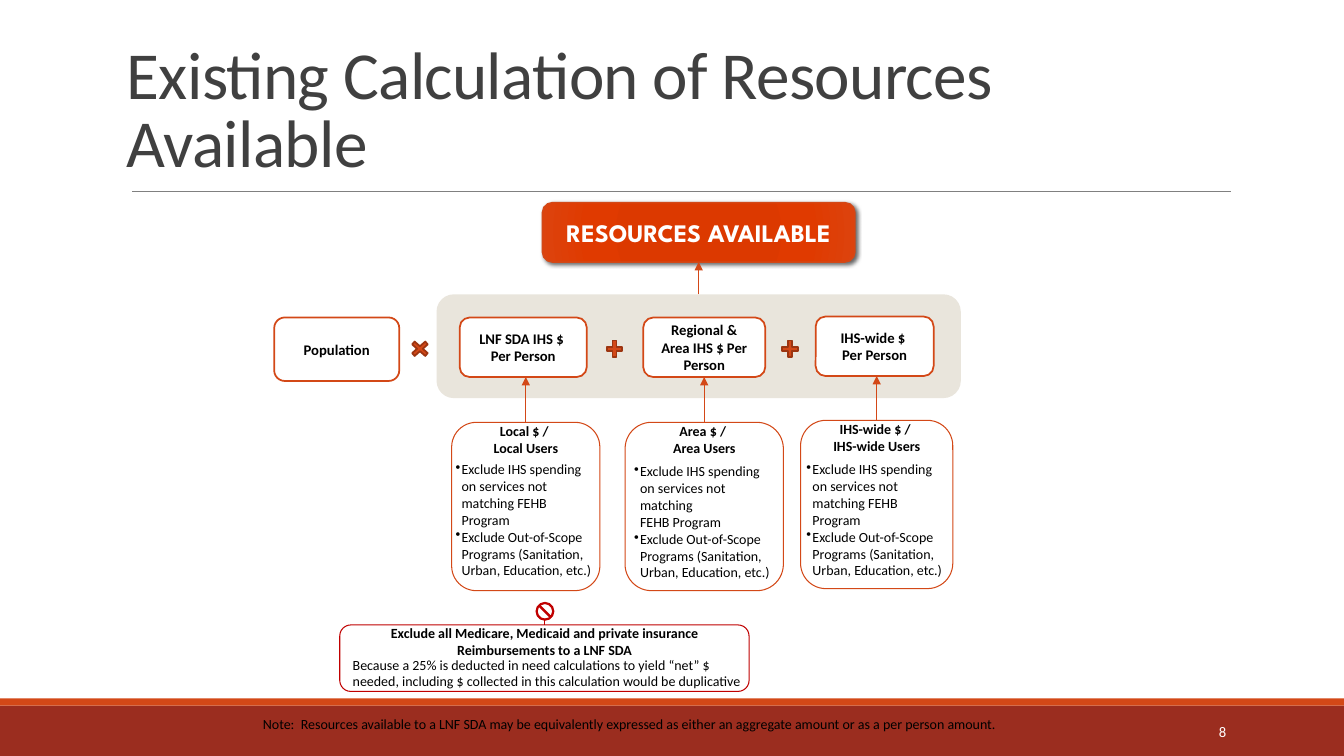
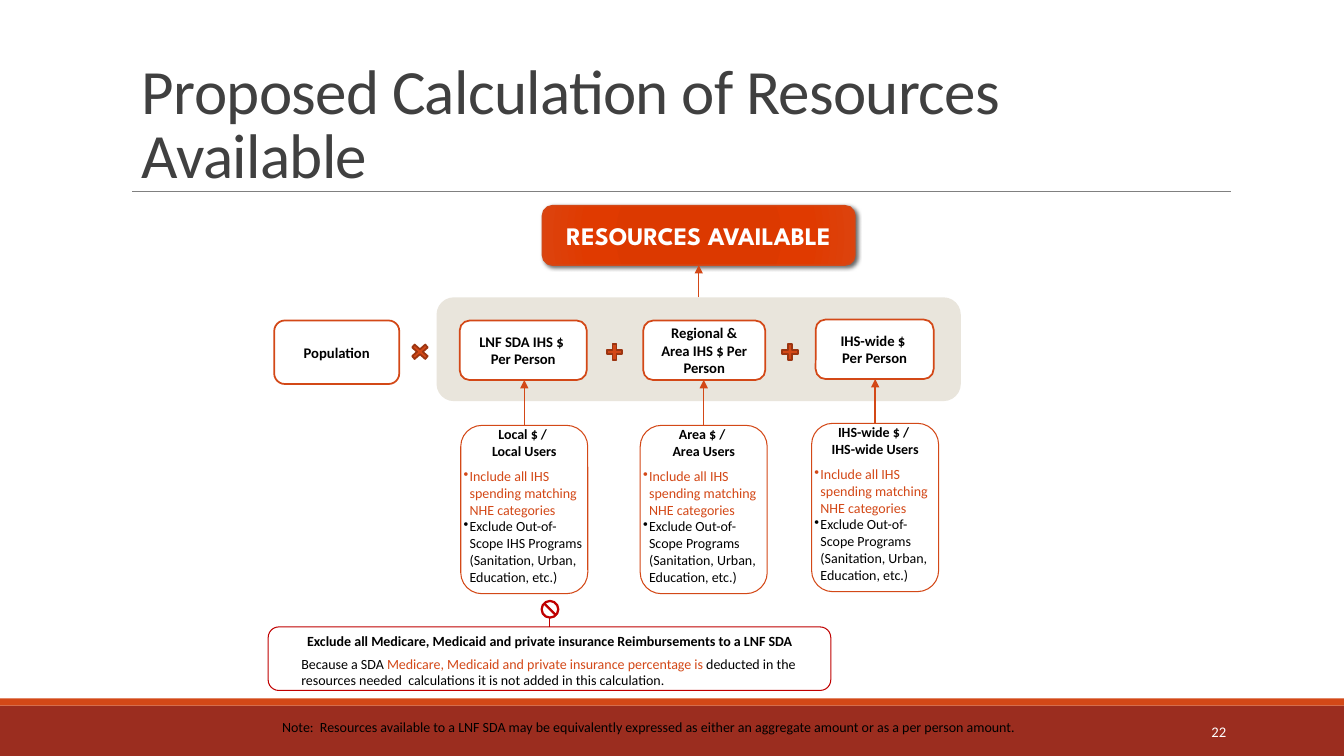
from typing import NamedTuple

from pptx import Presentation
from pptx.dml.color import RGBColor
from pptx.enum import shapes, text
from pptx.oxml import ns, parse_xml
from pptx.util import Inches, Pt

COLORS = {
    "white": "FFFFFF", "black": "000000", "title": "404040", "rule": "808080",
    "orange": "D34817", "rust": "9B2D1F", "edge": "9C3511",
    "panel": "E9E5DC", "red": "C00000",
}
GLOW = [(0, "DA3900"), (34, "DC3900"), (70, "E03A00"), (100, "DC430E")]
KIND = shapes.MSO_SHAPE
ALIGN = text.PP_ALIGN
ANCHOR = text.MSO_ANCHOR
NOTE = ("Note:  Resources available to a LNF SDA may be equivalently expressed "
        "as either an aggregate amount or as a per person amount.")
BAN = ("Exclude all Medicare, Medicaid and private insurance "
       "Reimbursements to a LNF SDA")
SCOPE = "Exclude Out-of-Scope Programs (Sanitation, Urban, Education, etc.)"
SPEND = "Exclude IHS spending on services not matching FEHB Program"
MATCH = "Include all IHS spending matching NHE categories"


class Box(NamedTuple):
    x: float
    y: float
    w: float
    h: float

    @property
    def mid(self) -> float:
        return self.x + self.w / 2

    @property
    def end(self) -> float:
        return self.y + self.h

    def down(self, dy: float) -> "Box":
        return self._replace(y=self.y + dy)


class Span(NamedTuple):
    words: str
    color: str = "black"


class Para(NamedTuple):
    spans: list[Span]
    size: float = 10
    bold: bool = False
    align: ALIGN = ALIGN.LEFT
    face: str = "Calibri"
    bullet: bool = False
    after: float = 0


class Factor(NamedTuple):
    words: str
    box: Box


class Card(NamedTuple):
    head: str
    box: Box
    gap: float
    items: list[Span]


class Page(NamedTuple):
    title: str
    name: Box
    size: float
    number: str
    dy: float
    cards: list[Card]
    wide: float
    ban: Box
    pad: float
    stop: Box
    why: Box
    cause: list[Span]
    note: Box


FACTORS = [
    Factor("Population", Box(2.72, 3.15, 1.24, 0.63)),
    Factor("LNF SDA IHS $ \vPer Person", Box(4.56, 3.15, 1.26, 0.59)),
    Factor("Regional & Area IHS $ Per Person", Box(6.38, 3.15, 1.21, 0.59)),
    Factor("IHS-wide $ \vPer Person", Box(8.09, 3.14, 1.17, 0.59)),
]
SIGNS = [
    (KIND.MATH_MULTIPLY, Box(4.04, 3.35, 0.25, 0.22), 0.17),
    (KIND.MATH_PLUS, Box(5.99, 3.35, 0.21, 0.22), 0.19),
    (KIND.MATH_PLUS, Box(7.73, 3.35, 0.21, 0.22), 0.19),
]
RESULT = Box(5.38, 2.01, 3.1, 0.59)
PANEL = Box(4.33, 2.92, 5.2, 1.03)
HEADS = ["Local $ / \vLocal Users", "Area $ / \vArea Users",
         "IHS-wide $ / \vIHS-wide Users"]

PAGES = [
    Page(
        "Existing Calculation of Resources Available",
        Box(1.16, 0.86, 11.24, 0.99), 48, "8", 0,
        [
            Card(HEADS[0], Box(4.48, 4.19, 1.47, 1.67), 3.5,
                 [Span(SPEND), Span(SCOPE)]),
            Card(HEADS[1], Box(6.2, 4.19, 1.57, 1.67), 5,
                 [Span(SPEND.replace(" FEHB", "\vFEHB")), Span(SCOPE)]),
            Card(HEADS[2], Box(7.94, 4.17, 1.51, 1.67), 5,
                 [Span(SPEND), Span(SCOPE)]),
        ],
        1.59, Box(3.37, 6.2, 4.06, 0.66), 0, Box(5.32, 5.98, 0.17, 0.17),
        Box(3.4, 6.46, 4.1, 0.44),
        [Span("Because a 25% is deducted in need calculations to yield “net” $ "
              "needed, including $ collected in this calculation would be "
              "duplicative")],
        Box(2.51, 7.05, 7.73, 0.27),
    ),
    Page(
        "Proposed Calculation of Resources Available",
        Box(1.31, 0.96, 10.96, 0.99), 45, "22", 0.03,
        [
            Card(HEADS[0], Box(4.57, 4.19, 1.26, 1.67), 6,
                 [Span(MATCH, "orange"),
                  Span(SCOPE.replace("Programs", "IHS Programs"))]),
            Card(HEADS[1], Box(6.35, 4.19, 1.26, 1.67), 6,
                 [Span(MATCH, "orange"), Span(SCOPE)]),
            Card(HEADS[2], Box(8.05, 4.17, 1.26, 1.67), 6,
                 [Span(MATCH, "orange"), Span(SCOPE)]),
        ],
        1.4, Box(2.66, 6.22, 5.58, 0.63), 0.06, Box(5.37, 5.96, 0.17, 0.17),
        Box(2.89, 6.45, 5.35, 0.44),
        [Span("Because a SDA"),
         Span(" Medicare, Medicaid and private insurance percentage is ", "orange"),
         Span("deducted in the resources needed  calculations it is not added "
              "in this calculation.")],
        Box(2.7, 7.08, 8, 0.27),
    ),
]


def tint(name: str) -> RGBColor:
    return RGBColor.from_string(COLORS[name])


def place(box: Box) -> list[int]:
    return [Inches(v) for v in box]


def node(xml: str):
    """Make one DrawingML element from text without its namespace."""
    tag, rest = xml[:xml.index(" ")], xml[xml.index(" "):]
    return parse_xml(f"{tag} {ns.nsdecls('a')}{rest}")


def write(shape, paras: list[Para], anchor=ANCHOR.TOP) -> None:
    frame = shape.text_frame
    frame.word_wrap = True
    frame.vertical_anchor = anchor
    for i, para in enumerate(paras):
        line = frame.paragraphs[0] if i == 0 else frame.add_paragraph()
        line.alignment = para.align
        line.space_after = Pt(para.after)
        font = line.font
        font.name, font.size, font.bold = para.face, Pt(para.size), para.bold
        font.color.rgb = tint(para.spans[0].color)
        if para.bullet:
            props = line._p.get_or_add_pPr()
            props.set("marL", str(Inches(0.06)))
            props.set("indent", str(-Inches(0.06)))
            props.insert_element_before(node('<a:buChar char="•"/>'), "a:defRPr")
        for span in para.spans:
            for j, words in enumerate(span.words.split("\v")):
                if j:
                    line.add_line_break()
                run = line.add_run()
                run.text = words
                if span.color != para.spans[0].color:
                    run.font.color.rgb = tint(span.color)


def label(slide, box: Box, paras: list[Para], anchor=ANCHOR.TOP):
    shape = slide.shapes.add_textbox(*place(box))
    write(shape, paras, anchor)
    return shape


def draw(slide, box: Box, fill: str, edge: str = "", width: float = 0,
         kind=KIND.ROUNDED_RECTANGLE):
    shape = slide.shapes.add_shape(kind, *place(box))
    shape.shadow.inherit = False
    shape.fill.solid()
    shape.fill.fore_color.rgb = tint(fill)
    if edge:
        shape.line.color.rgb = tint(edge)
        shape.line.width = Pt(width)
    else:
        shape.line.fill.background()
    return shape


def link(slide, start: tuple[float, float], stop: tuple[float, float],
         color: str, width: float, arrow: bool = False) -> None:
    line = slide.shapes.add_connector(
        shapes.MSO_CONNECTOR.STRAIGHT, *[Inches(v) for v in start + stop])
    line.line.color.rgb = tint(color)
    line.line.width = Pt(width)
    props = line._element.spPr
    if arrow:
        props.find(ns.qn("a:ln")).append(node('<a:tailEnd type="triangle"/>'))
    props.append(node("<a:effectLst />"))


def base(slide, page: Page) -> None:
    """Draw the bands, rule, title, note and page number."""
    draw(slide, Box(0, 7, 13.33, 0.5), "rust", kind=KIND.RECTANGLE)
    draw(slide, Box(0, 6.93, 13.33, 0.07), "orange", kind=KIND.RECTANGLE)
    link(slide, (1.31, 1.9), (12.21, 1.9), "rule", 0.5)
    title = label(slide, page.name,
                  [Para([Span(page.title, "title")], page.size)], ANCHOR.BOTTOM)
    line = title.text_frame.paragraphs[0]
    line.line_spacing = 0.85
    line.runs[0].font._element.set("spc", "-50")
    label(slide, page.note, [Para([Span(NOTE)])])
    label(slide, Box(10.83, 7.06, 1.43, 0.4),
          [Para([Span(page.number, "white")], 10.5, align=ALIGN.RIGHT)],
          ANCHOR.MIDDLE)


def glow(shape) -> None:
    """Give a shape the radial orange fill and a soft drop shadow."""
    stops = "".join(f'<a:gs pos="{pos * 1000}"><a:srgbClr val="{color}"/></a:gs>'
                    for pos, color in GLOW)
    props = shape._element.spPr
    props.replace(props.find(ns.qn("a:solidFill")), node(
        f'<a:gradFill rotWithShape="1"><a:gsLst>{stops}</a:gsLst>'
        '<a:path path="circle"><a:fillToRect l="100000" t="100000" '
        'r="100000" b="100000"/></a:path></a:gradFill>'))
    props.find(ns.qn("a:effectLst")).append(node(
        f'<a:outerShdw blurRad="{Pt(3)}" dist="{Pt(2)}" dir="2700000">'
        '<a:srgbClr val="000000"><a:alpha val="60000"/></a:srgbClr>'
        '</a:outerShdw>'))


def sums(slide, dy: float) -> None:
    """Draw the result and the factors it is worked out from."""
    top, panel = RESULT.down(dy), PANEL.down(dy)
    goal = draw(slide, top, "orange", "orange", 1)
    glow(goal)
    write(goal, [Para([Span("RESOURCES AVAILABLE", "white")], 18, True,
                      ALIGN.CENTER, "League Spartan")], ANCHOR.MIDDLE)
    draw(slide, panel, "panel")
    link(slide, (top.mid, panel.y), (top.mid, top.end), "orange", 0.75, True)
    for words, box in FACTORS:
        shape = draw(slide, box.down(dy), "white", "orange", 1.25)
        write(shape, [Para([Span(words)], 10.5, True, ALIGN.CENTER)],
              ANCHOR.MIDDLE)
    for kind, box, thick in SIGNS:
        sign = draw(slide, box.down(dy), "orange", "edge", 1.25, kind)
        sign.adjustments[0] = thick


def detail(slide, card: Card, goal: Box, page: Page) -> None:
    box = card.box.down(page.dy)
    draw(slide, box, "white", "orange", 0.75)
    area = Box(box.mid - page.wide / 2, box.y, page.wide, box.h)
    head = Para([Span(card.head)], bold=True, align=ALIGN.CENTER, after=card.gap)
    body = label(slide, area,
                 [head] + [Para([item], bullet=True) for item in card.items])
    body.text_frame.margin_top = 0
    link(slide, (box.mid, box.y), (box.mid, goal.end + page.dy),
         "orange", 1, True)


def bar(slide, page: Page) -> None:
    """Draw the box on what is left out, with its stop sign."""
    draw(slide, page.ban, "white", "red", 0.75)
    head = label(slide, page.ban.down(page.pad),
                 [Para([Span(BAN)], bold=True, align=ALIGN.CENTER)])
    head.text_frame.margin_top = 0
    label(slide, page.why, [Para(page.cause)])
    sign = draw(slide, page.stop, "white", "red", 1.25, KIND.NO_SYMBOL)
    sign.adjustments[0] = 0.03
    mid = page.ban.mid
    link(slide, (mid, page.ban.y), (mid, page.stop.end), "red", 1)


def main() -> None:
    deck = Presentation()
    deck.slide_width, deck.slide_height = Inches(13.33), Inches(7.5)
    for page in PAGES:
        slide = deck.slides.add_slide(deck.slide_layouts[6])
        base(slide, page)
        sums(slide, page.dy)
        for card, factor in zip(page.cards, FACTORS[1:]):
            detail(slide, card, factor.box, page)
        bar(slide, page)
    deck.save("out.pptx")


if __name__ == "__main__":
    main()
